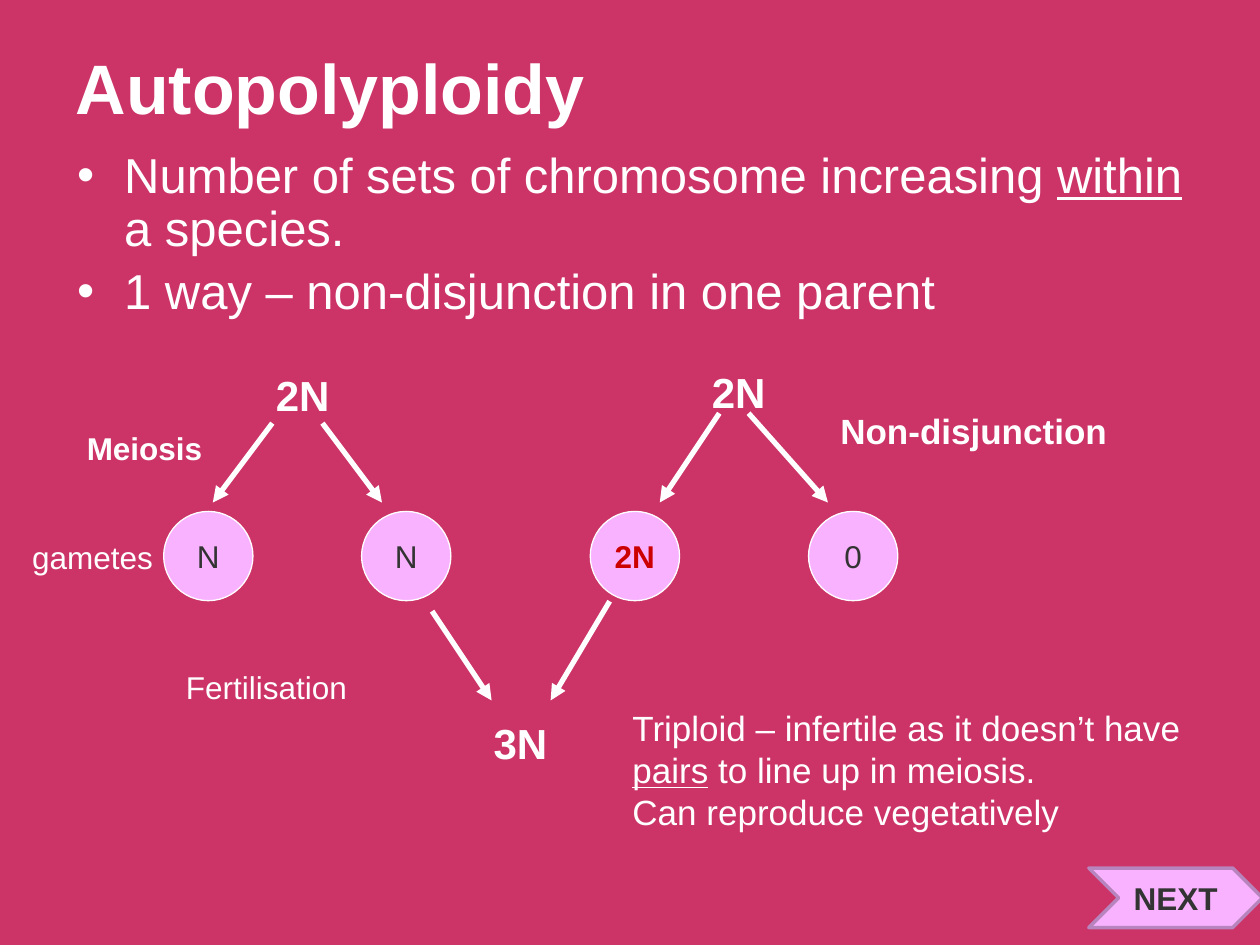
from lxml import etree
from pptx import Presentation
from pptx import util as u
from pptx.dml.color import RGBColor
from pptx.enum import shapes, text
from pptx.oxml import ns

CERISE = RGBColor(0xCC, 0x33, 0x66)
WHITE = RGBColor(0xFF, 0xFF, 0xFF)
PINK = RGBColor(0xF9, 0xB2, 0xFF)
MAUVE = RGBColor(0xB8, 0x84, 0xBD)
CHARCOAL = RGBColor(0x33, 0x33, 0x33)
RED = RGBColor(0xCC, 0x00, 0x00)


def write(box, words, size=18, bold=False, color=WHITE, align=text.PP_ALIGN.LEFT,
          anchor=text.MSO_ANCHOR.TOP, wrap=True, bullet=False):
    """Fill a box, one paragraph a line; words between underscores are underlined."""
    frame = box.text_frame
    frame.word_wrap = wrap
    frame.auto_size = text.MSO_AUTO_SIZE.NONE
    frame.vertical_anchor = anchor
    for number, line in enumerate(words.split("\n")):
        para = frame.add_paragraph() if number else frame.paragraphs[0]
        para.alignment = align
        para.space_before = u.Pt(size * 0.2 if bullet and number else 0)
        if bullet:
            para.line_spacing = 0.9
            properties = para._p.get_or_add_pPr()
            properties.set("marL", str(u.Cm(0.95)))
            properties.set("indent", str(u.Cm(-0.95)))
            etree.SubElement(properties, ns.qn("a:buChar"), char="•")
        for position, part in enumerate(line.split("_")):
            if part:
                span = para.add_run()
                span.text = part
                font = span.font
                font.name, font.size, font.bold = "Arial", u.Pt(size), bold
                font.color.rgb = color
                if position % 2:
                    font.underline = True


def add_filled(kind, left, top, width, height, line_color, line_width):
    shape = page.shapes.add_shape(kind, u.Cm(left), u.Cm(top), u.Cm(width), u.Cm(height))
    shape.shadow.inherit = False
    shape.fill.solid()
    shape.fill.fore_color.rgb = PINK
    shape.line.color.rgb = line_color
    shape.line.width = u.Pt(line_width)
    return shape


deck = Presentation()
deck.slide_width, deck.slide_height = u.Cm(25.4), u.Cm(19.05)
page = deck.slides.add_slide(deck.slide_layouts[1])
page.background.fill.solid()
page.background.fill.fore_color.rgb = CERISE

# Title and list
title, body = page.shapes.title, page.placeholders[1]
for box, left, top, height in ((title, 1.27, 0.76, 1.96), (body, 1.3, 2.92, 4.39)):
    box.left, box.top, box.width, box.height = u.Cm(left), u.Cm(top), u.Cm(22.86), u.Cm(height)
write(title, "Autopolyploidy", size=40, bold=True, anchor=text.MSO_ANCHOR.BOTTOM)
write(body, "Number of sets of chromosome increasing _within_ a species.\n"
      "1 way – non-disjunction in one parent", size=28, bullet=True)

# Gametes
for left, label, color, bold in (
    (3.3, "N", CHARCOAL, False),
    (7.29, "N", CHARCOAL, False),
    (11.9, "2N", RED, True),
    (16.3, "0", CHARCOAL, False),
):
    gamete = add_filled(shapes.MSO_SHAPE.OVAL, left, 10.31, 1.8, 1.8, WHITE, 0.75)
    write(gamete, label, bold=bold, color=color, align=text.PP_ALIGN.CENTER,
          anchor=text.MSO_ANCHOR.MIDDLE, wrap=False)

# Arrows: meiosis of each parent, then fertilisation
for ends in (
    (5.49, 8.53, 4.29, 10.13),
    (6.5, 8.53, 7.7, 10.13),
    (14.5, 8.33, 13.3, 10.13),
    (15.09, 8.33, 16.69, 10.13),
    (8.71, 12.32, 9.91, 14.12),
    (12.29, 12.12, 11.1, 14.12),
):
    arrow = page.shapes.add_connector(shapes.MSO_CONNECTOR.STRAIGHT, *map(u.Cm, ends))
    arrow.line.color.rgb = WHITE
    arrow.line.width = u.Pt(3)
    etree.SubElement(arrow.line._get_or_add_ln(), ns.qn("a:tailEnd"), type="triangle")
    etree.SubElement(arrow._element.spPr, ns.qn("a:effectLst"))

# Labels
for words, left, top, width, height, size, bold in (
    ("2N", 5.31, 7.32, 2, 1.27, 24, True),
    ("2N", 14.1, 7.26, 2, 1.27, 24, True),
    ("3N", 9.7, 14.33, 1.8, 1.27, 24, True),
    ("Meiosis", 1.5, 8.53, 3.2, 1.02, 18, True),
    ("Non-disjunction", 16.69, 8.13, 8.71, 1.09, 20, True),
    ("gametes", 0.4, 10.72, 3.3, 1.02, 18, False),
    ("Fertilisation", 3.5, 13.34, 4.2, 1.02, 18, False),
    ("Triploid – infertile as it doesn’t have _pairs_ to line up in meiosis.\n"
     "Can reproduce vegetatively", 12.5, 14.12, 11.66, 2.79, 20, False),
):
    label = page.shapes.add_textbox(u.Cm(left), u.Cm(top), u.Cm(width), u.Cm(height))
    write(label, words, size=size, bold=bold)

# Next button
button = add_filled(shapes.MSO_SHAPE.CHEVRON, 21.95, 17.5, 3.5, 1.2, MAUVE, 2)
write(button, "NEXT", bold=True, color=CHARCOAL, align=text.PP_ALIGN.CENTER,
      anchor=text.MSO_ANCHOR.MIDDLE, wrap=False)

deck.save("out.pptx")
